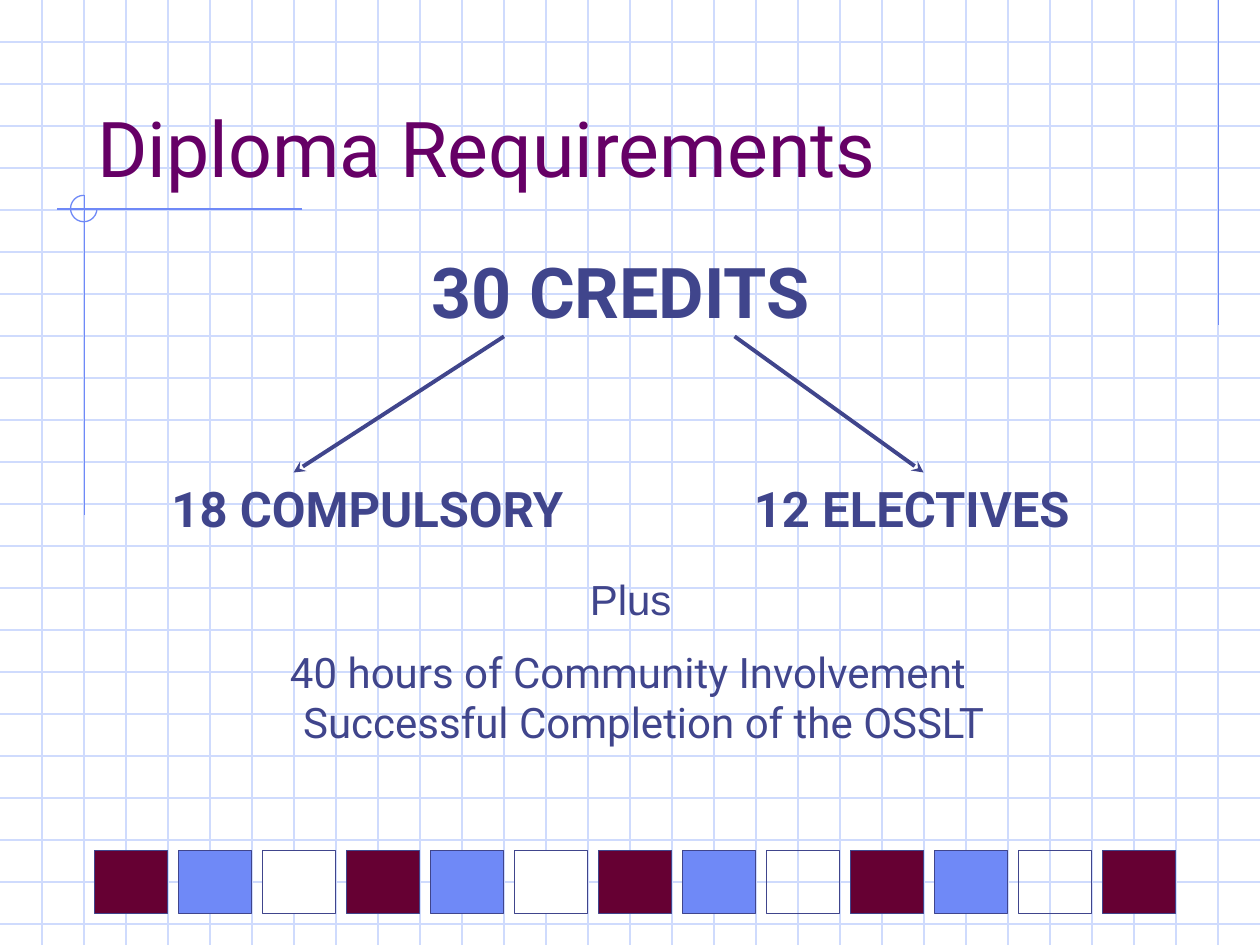
from dataclasses import dataclass

from lxml import etree
from pptx import Presentation
from pptx import util as u
from pptx.dml.color import RGBColor
from pptx.enum import shapes, text
from pptx.oxml.ns import qn


@dataclass(frozen=True)
class Theme:
    grid: str = "CFDBFD"
    blue: str = "6F89F7"
    ink: str = "40458C"
    plum: str = "660066"
    wine: str = "660033"
    white: str = "FFFFFF"
    font: str = "Roboto"
    plain: str = "Arial"
    title: int = 44
    lead: int = 40
    head: int = 28
    body: int = 24
    thin: float = 0.75
    thick: float = 2.25


class Deck:
    """Draws styled elements on the current slide."""

    def __init__(self, theme, slide):
        self.theme = theme
        self.slide = slide

    def color(self, code):
        return RGBColor.from_string(code)

    def line(self, x1, y1, x2, y2, code, width=None, arrow=False):
        link = self.slide.shapes.add_connector(
            shapes.MSO_CONNECTOR.STRAIGHT, *map(u.Inches, (x1, y1, x2, y2)))
        link.line.color.rgb = self.color(code)
        link.line.width = u.Pt(width or self.theme.thin)
        if arrow:
            etree.SubElement(link.line._get_or_add_ln(), qn("a:tailEnd"), type="stealth")
        etree.SubElement(link._element.spPr, qn("a:effectLst"))

    def shape(self, kind, box, edge, fill=None):
        shape = self.slide.shapes.add_shape(kind, *map(u.Inches, box))
        shape.shadow.inherit = False
        if fill:
            shape.fill.solid()
            shape.fill.fore_color.rgb = self.color(fill)
        else:
            shape.fill.background()
        shape.line.color.rgb = self.color(edge)
        shape.line.width = u.Pt(self.theme.thin)
        return shape

    def style(self, para, size, code, bold=False, font=None, align=text.PP_ALIGN.CENTER):
        para.alignment = align
        para.font.size = u.Pt(size)
        para.font.name = font or self.theme.font
        para.font.bold = bold
        para.font.color.rgb = self.color(code)

    def title(self, words, box):
        hold = self.slide.shapes.title
        hold.left, hold.top, hold.width, hold.height = map(u.Inches, box)
        frame = hold.text_frame
        frame.text = words
        frame.auto_size = text.MSO_AUTO_SIZE.NONE
        frame.vertical_anchor = text.MSO_ANCHOR.BOTTOM
        self.style(frame.paragraphs[0], self.theme.title, self.theme.plum,
                   align=text.PP_ALIGN.LEFT)
        self.slide.shapes._spTree.append(hold._element)

    def text(self, words, box, size, bold=False, font=None, shift=0):
        frame = self.slide.shapes.add_textbox(*map(u.Inches, box)).text_frame
        frame.word_wrap = True
        frame.margin_right = u.Inches(0.1 + shift)
        frame.text = words
        for para in frame.paragraphs:
            self.style(para, size, self.theme.ink, bold, font)
        if shift:
            frame.paragraphs[-1]._p.get_or_add_pPr().set("marL", str(u.Inches(shift)))


def main():
    prs = Presentation()
    prs.slide_width, prs.slide_height = u.Inches(10), u.Inches(7.5)
    theme = Theme()
    deck = Deck(theme, prs.slides.add_slide(prs.slide_layouts[5]))

    for i in range(1, 23):
        deck.line(0, i / 3, 10, i / 3, theme.grid)
    for i in range(1, 30):
        deck.line(i / 3, 0, i / 3, 7.5, theme.grid)

    for ends in ((9.67, 0, 9.67, 2.58), (2.4, 1.66, 0.45, 1.66), (0.67, 1.55, 0.67, 4.09)):
        deck.line(*ends, theme.blue)
    arc = deck.shape(shapes.MSO_SHAPE.ARC, (0.56, 1.55, 0.21, 0.21), theme.blue)
    arc.adjustments[0], arc.adjustments[1] = 0, 162

    fills = (theme.wine, theme.blue, theme.white) * 2 + (theme.wine, theme.blue, None) * 2
    for i, fill in enumerate(fills + (theme.wine,)):
        deck.shape(shapes.MSO_SHAPE.RECTANGLE, (0.75 + i * 2 / 3, 6.75, 0.58, 0.5),
                   theme.ink, fill)

    deck.title("Diploma Requirements", (0.67, 0.33, 8.5, 1.25))
    deck.text("30 CREDITS", (2.92, 1.92, 4.01, 0.77), theme.lead, bold=True)
    for start, end in ((4, 2.33), (5.83, 7.33)):
        deck.line(start, 2.67, end, 3.75, theme.ink, theme.thick, arrow=True)
    deck.text("18 COMPULSORY", (0.83, 3.75, 4.17, 0.57), theme.head, bold=True)
    deck.text("12 ELECTIVES", (5.5, 3.75, 3.47, 0.57), theme.head, bold=True)
    deck.text("40 hours of Community Involvement\nSuccessful Completion of the OSSLT",
              (1.83, 5.08, 6.56, 0.9), theme.body, shift=0.25)
    deck.text("Plus", (4.5, 4.5, 1.01, 0.5), theme.body, font=theme.plain)

    prs.save("out.pptx")


if __name__ == "__main__":
    main()
